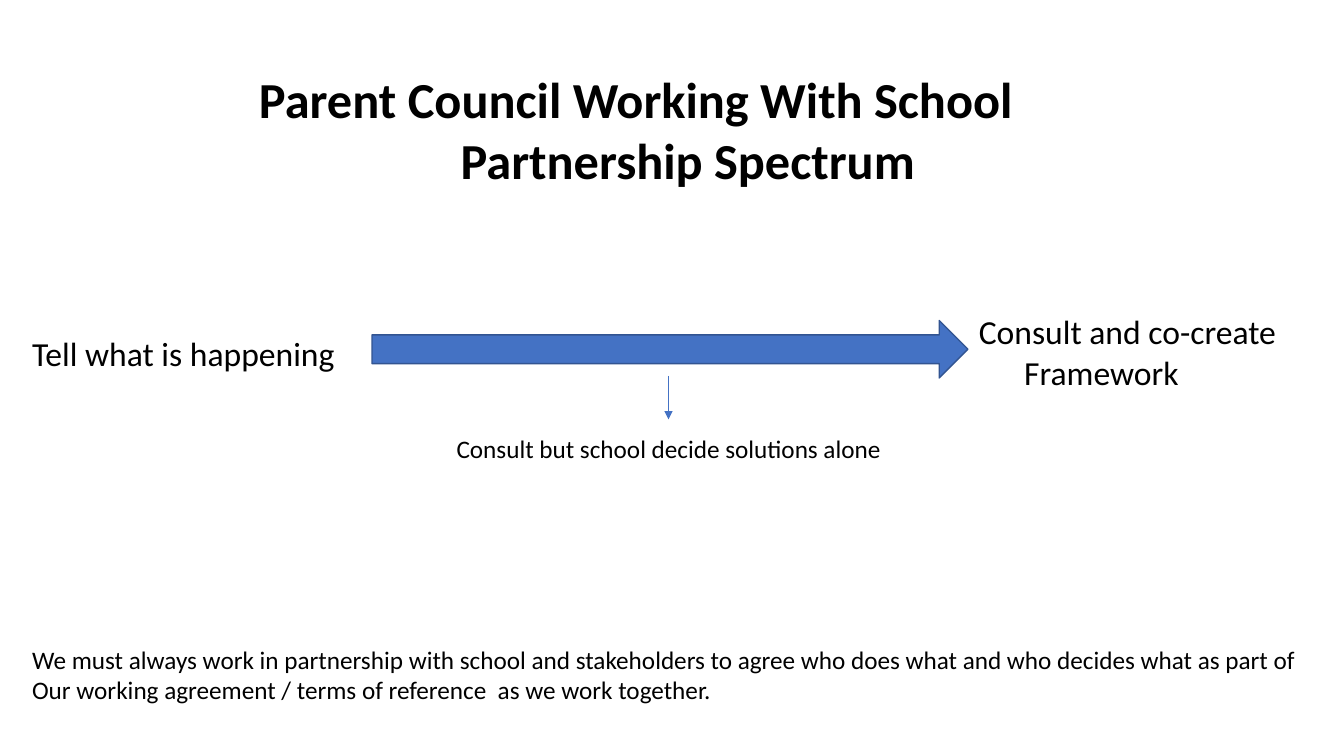
from pptx import Presentation
from pptx.dml.color import RGBColor
from pptx.enum.shapes import MSO_CONNECTOR, MSO_SHAPE
from pptx.enum.text import MSO_AUTO_SIZE
from pptx.util import Inches, Pt
from lxml import etree

BLACK = RGBColor(0x00, 0x00, 0x00)
BLUE = RGBColor(0x44, 0x72, 0xC4)
DARK_BLUE = RGBColor(0x32, 0x54, 0x91)
FONT = "Calibri"

# Content: places are left, top, width, height in percent of the slide;
# each line is its wording and its indent in inches
TITLE = dict(place=(18.53, 8.4, 65.49, 17.47), size=36, bold=True, wrap=True,
             lines=[("Parent Council Working With School", 0),
                    ("Partnership Spectrum", 2)])
TELL = dict(place=(1.65, 43.33, 24.23, 6.67), size=24,
            lines=[("Tell what is happening", 0)])
CONSULT = dict(place=(33.23, 56.67, 33.46, 5.33), size=18,
               lines=[("Consult but school decide solutions alone", 0)])
CO_CREATE = dict(place=(72.09, 40.53, 23.86, 12.13), size=24,
                 lines=[("Consult and co-create", 0), ("Framework", 0.45)])
AGREEMENT = dict(
    place=(1.65, 84.53, 97.07, 9.47), size=18, wrap=True,
    lines=[("We must always work in partnership with school and stakeholders "
            "to agree who does what and who decides what as part of", 0),
           ("Our working agreement / terms of reference  as we work together.", 0)])
SPECTRUM = (27.68, 42.4, 44.34, 7.6)
POINTER = (49.74, 49.73, 49.74, 55.47)  # start x, y and end x, y

prs = Presentation()
prs.slide_width, prs.slide_height = Inches(13.33), Inches(7.5)
slide = prs.slides.add_slide(prs.slide_layouts[6])


def to_emu(shares):
    sides = (prs.slide_width, prs.slide_height) * 2
    return [round(side * share / 100) for side, share in zip(sides, shares)]


def add_text(place, size, lines, bold=False, wrap=False):
    frame = slide.shapes.add_textbox(*to_emu(place)).text_frame
    frame.word_wrap = wrap
    frame.auto_size = MSO_AUTO_SIZE.SHAPE_TO_FIT_TEXT
    frame.text = "\n".join(wording for wording, _ in lines)
    for paragraph, (_, indent) in zip(frame.paragraphs, lines):
        font = paragraph.font
        font.name, font.size, font.bold = FONT, Pt(size), bold
        font.color.rgb = BLACK
        if indent:
            paragraph._p.get_or_add_pPr().set("marL", str(Inches(indent)))


# Texts
for text in (TITLE, TELL, CONSULT, CO_CREATE, AGREEMENT):
    add_text(**text)

# Spectrum arrow
spectrum = slide.shapes.add_shape(MSO_SHAPE.RIGHT_ARROW, *to_emu(SPECTRUM))
spectrum.shadow.inherit = False
spectrum.fill.solid()
spectrum.fill.fore_color.rgb = BLUE
spectrum.line.color.rgb = DARK_BLUE
spectrum.line.width = Pt(1)

# Pointer down to the middle of the spectrum
pointer = slide.shapes.add_connector(MSO_CONNECTOR.STRAIGHT, *to_emu(POINTER))
pointer.line.color.rgb = BLUE
pointer.line.width = Pt(0.5)
namespace = "{http://schemas.openxmlformats.org/drawingml/2006/main}"
etree.SubElement(pointer.line._get_or_add_ln(), namespace + "tailEnd", type="triangle")
etree.SubElement(pointer._element.spPr, namespace + "effectLst")

prs.save("out.pptx")
